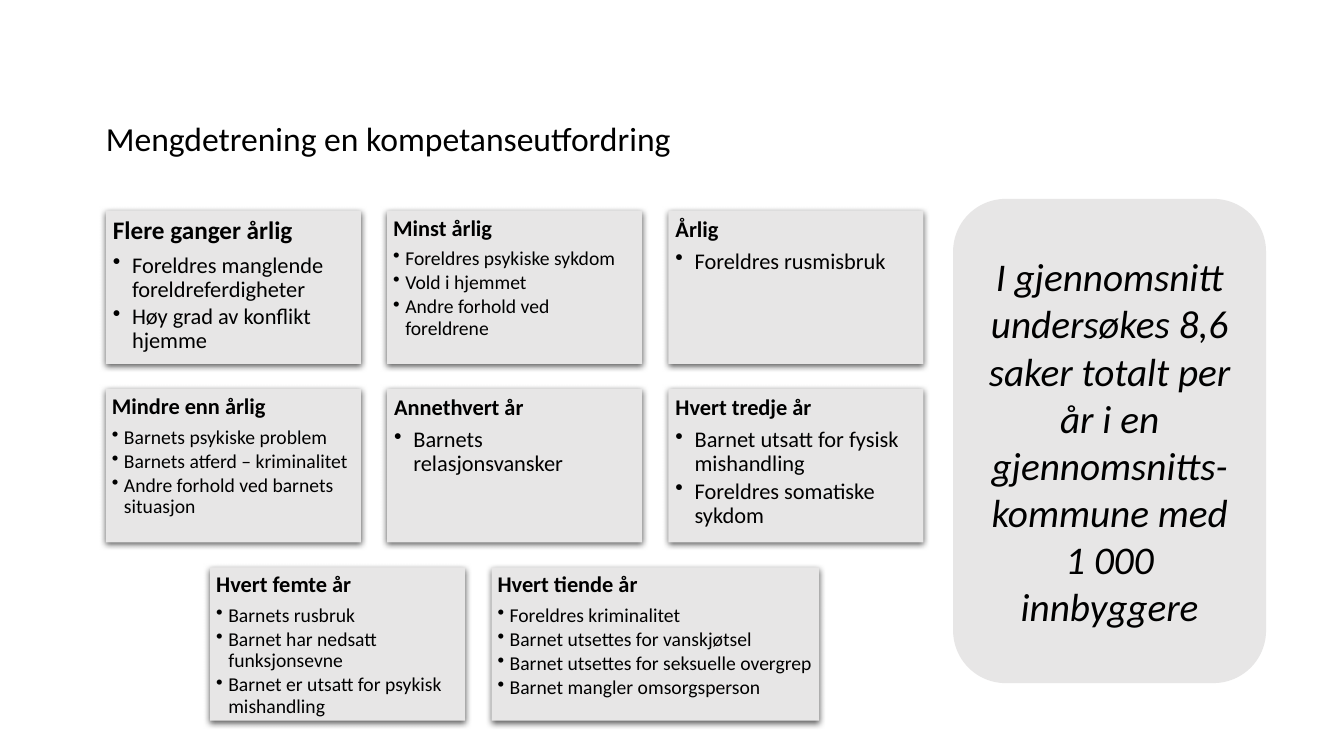
from dataclasses import dataclass

from lxml import etree
from pptx import Presentation
from pptx import util as u
from pptx.dml.color import RGBColor
from pptx.enum import shapes, text
from pptx.oxml.ns import qn

CARD_WIDTH, CARD_HEIGHT, GAP = 2.53, 1.52, 0.26
WIDE_CARD = 3.25
GRID_LEFT, GRID_TOP = 1.05, 2.09
GRID_WIDTH = 3 * CARD_WIDTH + 2 * GAP

ROWS = [
    [
        ("Flere ganger årlig", 18, 16, CARD_WIDTH,
         ["Foreldres manglende foreldreferdigheter", "Høy grad av konflikt hjemme"]),
        ("Minst årlig", 16, 14, CARD_WIDTH,
         ["Foreldres psykiske sykdom", "Vold i hjemmet", "Andre forhold ved foreldrene"]),
        ("Årlig", 16, 16, CARD_WIDTH, ["Foreldres rusmisbruk"]),
    ],
    [
        ("Mindre enn årlig", 16, 14, CARD_WIDTH,
         ["Barnets psykiske problem", "Barnets atferd – kriminalitet",
          "Andre forhold ved barnets situasjon"]),
        ("Annethvert år", 16, 16, CARD_WIDTH, ["Barnets relasjonsvansker"]),
        ("Hvert tredje år", 16, 16, CARD_WIDTH,
         ["Barnet utsatt for fysisk mishandling", "Foreldres somatiske sykdom"]),
    ],
    [
        ("Hvert femte år", 16, 14, CARD_WIDTH,
         ["Barnets rusbruk", "Barnet har nedsatt funksjonsevne",
          "Barnet er utsatt for psykisk mishandling"]),
        ("Hvert tiende år", 16, 14, WIDE_CARD,
         ["Foreldres kriminalitet", "Barnet utsettes for vanskjøtsel",
          "Barnet utsettes for seksuelle overgrep", "Barnet mangler omsorgsperson"]),
    ],
]


def color(value):
    return RGBColor.from_string(value)


@dataclass
class FrequencySlide:
    """Style and drawing methods for the slide on case frequency."""
    slide: object
    font: str = "Calibri"
    ink: str = "000000"
    panel: str = "E7E6E6"

    def style(self, paragraph, size, bold=False, italic=False):
        font = paragraph.font
        font.name, font.size = self.font, u.Pt(size)
        font.bold, font.italic = bold, italic
        font.color.rgb = color(self.ink)

    def title(self, words, left, top, width, height):
        shape = self.slide.shapes.title
        shape.left, shape.top = u.Inches(left), u.Inches(top)
        shape.width, shape.height = u.Inches(width), u.Inches(height)
        frame = shape.text_frame
        frame.text = words
        frame.vertical_anchor = text.MSO_ANCHOR.BOTTOM
        paragraph = frame.paragraphs[0]
        paragraph.alignment = text.PP_ALIGN.LEFT
        paragraph.line_spacing = 0.9
        self.style(paragraph, 24)

    def box(self, kind, left, top, width, height):
        shape = self.slide.shapes.add_shape(
            kind, u.Inches(left), u.Inches(top), u.Inches(width), u.Inches(height))
        shape.shadow.inherit = False
        shape.fill.solid()
        shape.fill.fore_color.rgb = color(self.panel)
        shape.line.fill.background()
        shape.text_frame.word_wrap = True
        return shape

    def drop_shadow(self, shape):
        effects = shape.element.spPr.find(qn("a:effectLst"))
        shadow = etree.SubElement(
            effects, qn("a:outerShdw"), blurRad=str(u.Pt(4.5)), dist=str(u.Pt(1.5)),
            dir="5400000", algn="ctr", rotWithShape="0")
        tint = etree.SubElement(shadow, qn("a:srgbClr"), val=self.ink)
        etree.SubElement(tint, qn("a:alpha"), val="63000")

    def bullet(self, paragraph, indent):
        paragraph.level = 1
        properties = paragraph._p.get_or_add_pPr()
        properties.set("marL", str(u.Inches(indent)))
        properties.set("indent", str(-u.Inches(indent)))
        etree.SubElement(properties, qn("a:buChar"), char="•")

    def card(self, left, top, width, heading, heading_size, item_size, items):
        shape = self.box(shapes.MSO_SHAPE.RECTANGLE, left, top, width, CARD_HEIGHT)
        self.drop_shadow(shape)
        frame = shape.text_frame
        frame.vertical_anchor = text.MSO_ANCHOR.TOP
        inset, indent = (0.07, 0.19) if item_size == 16 else (0.06, 0.12)
        frame.margin_left = frame.margin_right = u.Inches(inset)
        frame.margin_top = frame.margin_bottom = u.Inches(inset)
        frame.text = "\n".join([heading, *items])
        for index, paragraph in enumerate(frame.paragraphs):
            is_heading = index == 0
            size = heading_size if is_heading else item_size
            if not is_heading:
                self.bullet(paragraph, indent)
            paragraph.alignment = text.PP_ALIGN.LEFT
            paragraph.line_spacing = 0.9
            paragraph.space_after = u.Pt(round(size * (0.35 if is_heading else 0.15), 1))
            self.style(paragraph, size, bold=is_heading)

    def callout(self, words, left, top, width, height):
        shape = self.box(shapes.MSO_SHAPE.ROUNDED_RECTANGLE, left, top, width, height)
        shape.line.color.rgb = color(self.panel)
        shape.line.width = u.Pt(1)
        frame = shape.text_frame
        frame.text = words
        frame.vertical_anchor = text.MSO_ANCHOR.MIDDLE
        paragraph = frame.paragraphs[0]
        paragraph.alignment = text.PP_ALIGN.CENTER
        self.style(paragraph, 28, italic=True)


def main():
    presentation = Presentation()
    presentation.slide_width = u.Inches(13.33)
    presentation.slide_height = u.Inches(7.5)
    page = FrequencySlide(presentation.slides.add_slide(presentation.slide_layouts[5]))
    page.title("Mengdetrening en kompetanseutfordring", 0.95, 0.23, 10.89, 1.39)
    for row, cards in enumerate(ROWS):
        top = GRID_TOP + row * (CARD_HEIGHT + 0.25)
        row_width = sum(card[3] for card in cards) + GAP * (len(cards) - 1)
        left = GRID_LEFT + (GRID_WIDTH - row_width) / 2
        for heading, heading_size, item_size, width, items in cards:
            page.card(left, top, width, heading, heading_size, item_size, items)
            left += width + GAP
    page.callout("I gjennomsnitt undersøkes 8,6 saker totalt per år i en "
                 "gjennomsnitts-kommune med 1 000 innbyggere", 9.46, 1.98, 3.09, 4.79)
    presentation.save("out.pptx")


if __name__ == "__main__":
    main()
